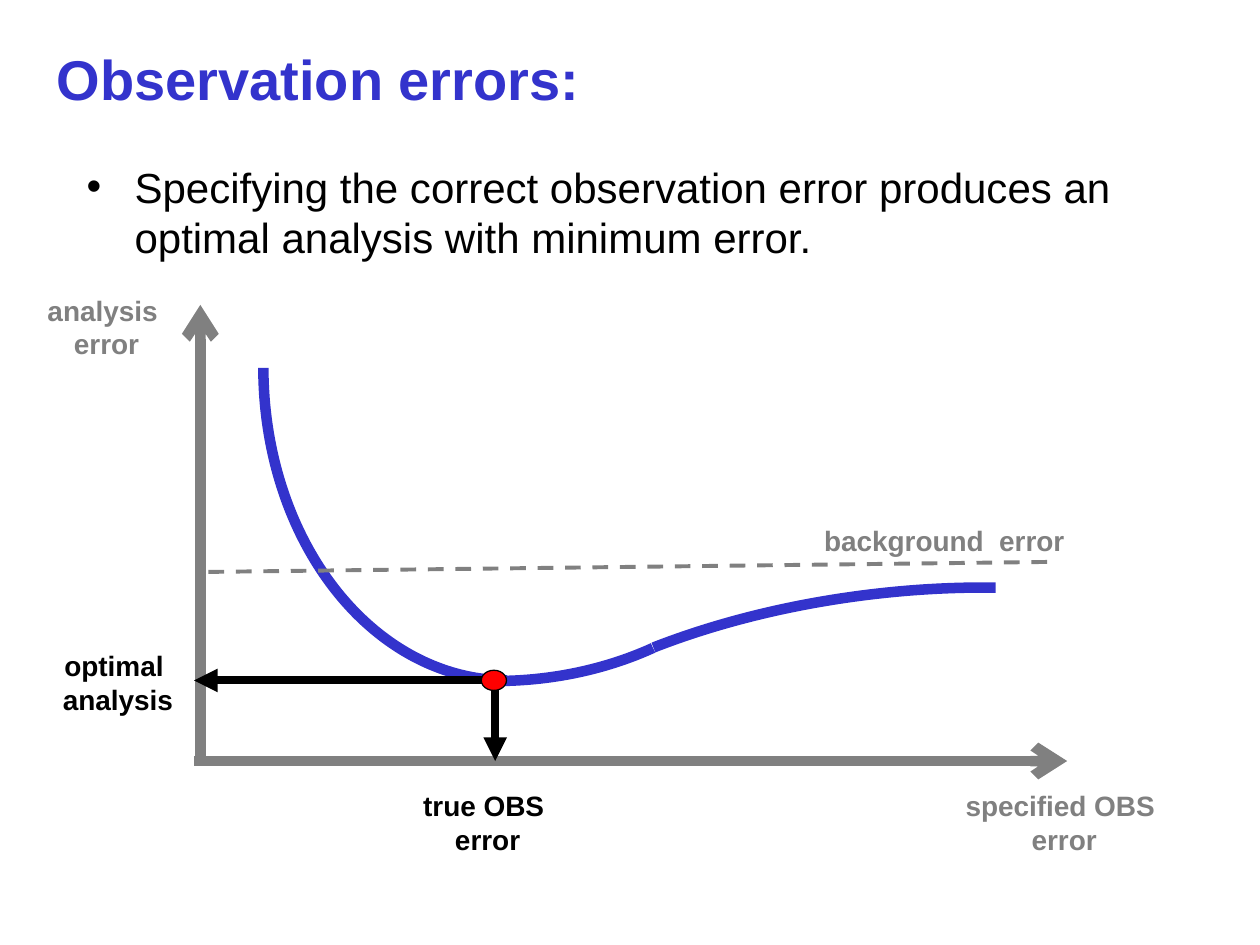
from lxml import etree
from pptx import Presentation
from pptx.dml.color import RGBColor
from pptx.enum.dml import MSO_LINE
from pptx.enum.shapes import MSO_CONNECTOR, MSO_SHAPE
from pptx.enum.text import MSO_ANCHOR, MSO_AUTO_SIZE, PP_ALIGN
from pptx.oxml.ns import qn
from pptx.util import Emu, Pt

EMU_PER_PX = 9144
ARC, OVAL = MSO_SHAPE.ARC, MSO_SHAPE.OVAL
STRAIGHT, DASH = MSO_CONNECTOR.STRAIGHT, MSO_LINE.DASH
LEFT, CENTER = PP_ALIGN.LEFT, PP_ALIGN.CENTER
TOP, NO_FIT = MSO_ANCHOR.TOP, MSO_AUTO_SIZE.NONE
FONT = "Arial"
BLUE, GREY, BLACK, RED = "3333CC", "808080", "000000", "FF0000"


def px(*lengths):
    """Turn px lengths into EMU."""
    return [Emu(length * EMU_PER_PX) for length in lengths]


def color(hex_code):
    """Turn a hex string into a colour."""
    return RGBColor.from_string(hex_code)


def write(frame, lines, size, hex_code, bold, align=LEFT, wrap=True):
    """Fill a text frame with one paragraph per line."""
    frame.word_wrap = wrap
    frame.auto_size = NO_FIT
    frame.vertical_anchor = TOP
    for index, line in enumerate(lines):
        paragraph = frame.add_paragraph() if index else frame.paragraphs[0]
        paragraph.alignment = align
        run = paragraph.add_run()
        run.text = line
        run.font.name = FONT
        run.font.size = Pt(size)
        run.font.bold = bold
        run.font.color.rgb = color(hex_code)


def add_heading(slide, left, top, width, height):
    """Place the slide title."""
    title = slide.shapes.title
    title.left, title.top, title.width, title.height = px(left, top, width, height)
    write(title.text_frame, ["Observation errors:"], 32, BLUE, True)


def add_statement(slide, left, top, width, height):
    """Place the bulleted statement."""
    statement = slide.shapes.add_textbox(*px(left, top, width, height))
    properties = statement.text_frame.paragraphs[0]._p.get_or_add_pPr()
    indent, = px(38)
    properties.set("marL", str(indent))
    properties.set("indent", str(-indent))
    etree.SubElement(properties, qn("a:buFont")).set("typeface", FONT)
    etree.SubElement(properties, qn("a:buChar")).set("char", "•")
    text = "Specifying the correct observation error produces an optimal analysis with minimum error."
    write(statement.text_frame, [text], 24, BLACK, False)


def add_line(slide, start, end, hex_code, weight, head=None, dash=None):
    """Draw a straight line, optionally dashed or with an arrowhead."""
    line = slide.shapes.add_connector(STRAIGHT, *px(*start, *end))
    line.line.color.rgb = color(hex_code)
    line.line.width = Pt(weight)
    if dash:
        line.line.dash_style = dash
    if head:
        outline = line.line._get_or_add_ln()
        etree.SubElement(outline, qn("a:tailEnd")).set("type", head)
    etree.SubElement(line._element.spPr, qn("a:effectLst"))


def add_arc(slide, box, rotation, angles):
    """Draw one piece of the error curve."""
    arc = slide.shapes.add_shape(ARC, *px(*box))
    arc.shadow.inherit = False
    arc.rotation = rotation
    arc.adjustments[0], arc.adjustments[1] = angles
    arc.fill.background()
    arc.line.color.rgb = color(BLUE)
    arc.line.width = Pt(6)


def add_optimum(slide, box):
    """Draw the dot at the minimum of the curve."""
    dot = slide.shapes.add_shape(OVAL, *px(*box))
    dot.shadow.inherit = False
    dot.fill.solid()
    dot.fill.fore_color.rgb = color(RED)
    dot.line.color.rgb = color(BLACK)
    dot.line.width = Pt(0.75)


def add_error_diagram(slide, left, top):
    """Draw analysis error against specified observation error."""
    def at(x, y, *size):
        return (left + x, top + y, *size)

    axis_x, axis_y, best_x, best_y = 132, 376, 366, 312
    add_line(slide, at(axis_x, axis_y), at(axis_x, 14), GREY, 6, "arrow")
    add_line(slide, at(axis_x - 5, axis_y), at(820, axis_y), GREY, 6, "arrow")

    curve = [
        ((182, -184, 387, 496), 180, (162, 0)),
        ((173, -129, 387, 496), 90, (193.97, 0)),
        ((517, 49, 335, 722), 263.2, (185.73, 18.86)),
    ]
    for box, rotation, angles in curve:
        add_arc(slide, at(*box), rotation, angles)

    add_line(slide, at(804, 218), at(axis_x, 226), GREY, 2.25, dash=DASH)
    add_line(slide, at(best_x, best_y), at(best_x, axis_y), BLACK, 4.5, "triangle")
    add_line(slide, at(best_x - 6, best_y), at(axis_x - 5, best_y), BLACK, 4.5, "triangle")
    add_optimum(slide, at(355, 304, 20, 16))

    labels = [
        ((616, 183, 213, 37), ["background  error"], GREY),
        ((298, 393, 124, 64), ["true OBS ", "error"], BLACK),
        ((12, 282, 109, 64), ["optimal ", "analysis"], BLACK),
        ((728, 393, 179, 64), ["specified OBS ", "error"], GREY),
        ((0, 0, 115, 64), ["analysis ", "error"], GREY),
    ]
    for box, lines, hex_code in labels:
        label = slide.shapes.add_textbox(*px(*at(*box)))
        write(label.text_frame, lines, 16, hex_code, True, CENTER, wrap=False)


def main():
    """Build and save the slide."""
    deck = Presentation()
    deck.slide_width, deck.slide_height = px(1000, 750)
    slide = deck.slides.add_slide(deck.slide_layouts[5])
    add_heading(slide, 35, 30, 946, 64)
    add_statement(slide, 59, 123, 914, 91)
    add_error_diagram(slide, 27, 228)
    deck.save("out.pptx")


if __name__ == "__main__":
    main()
